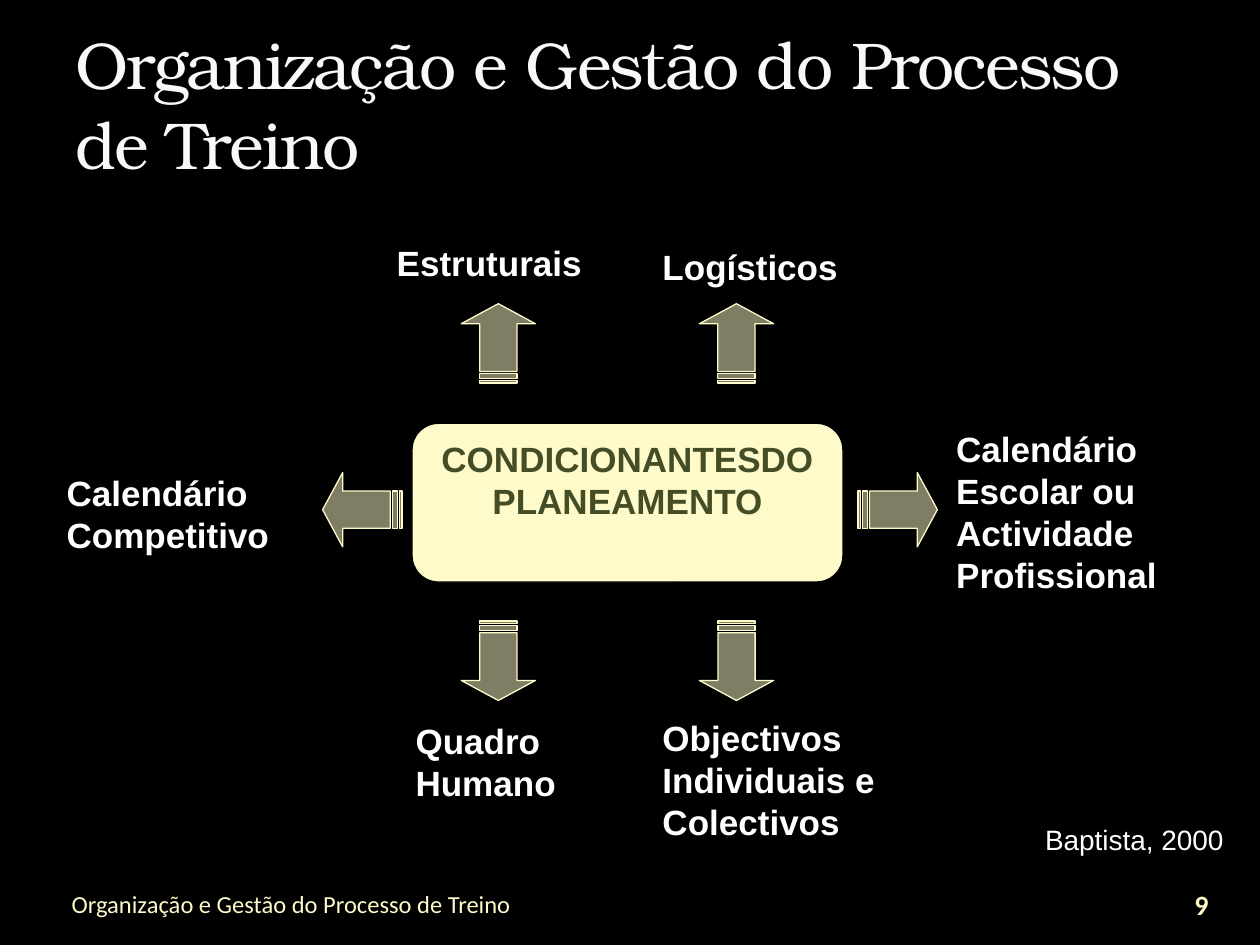
from dataclasses import dataclass

from lxml import etree
from pptx import Presentation
from pptx import util as u
from pptx.dml.color import RGBColor
from pptx.enum import shapes, text
from pptx.oxml import ns


@dataclass(frozen=True)
class Theme:
    back: str = "000000"
    white: str = "FFFFFF"
    title: str = "F9F9F9"
    outline: str = "3C4422"
    cream: str = "FEFAC9"
    olive: str = "444D26"
    title_font: str = "TeX Gyre Bonum"
    label_font: str = "Arial"
    footer_font: str = "Calibri"
    title_size: float = 37.8
    label_size: int = 20
    note_size: int = 16
    footer_size: int = 14


THEME = Theme()
TITLE = "Organização e Gestão do Processo de Treino"
ALIGN = text.PP_ALIGN
ANCHOR = text.MSO_ANCHOR
LABEL = dict(name=THEME.label_font, size=THEME.label_size, bold=True, color=THEME.white)

LABELS = [  # lines, box
    (["Estruturais"], (3.05, 1.87, 1.68, 0.44)),
    (["Logísticos"], (5.16, 1.9, 1.6, 0.44)),
    (["Calendário", "Competitivo"], (0.43, 3.69, 1.82, 0.77)),
    (["Calendário", "Escolar ou", "Actividade", "Profissional"], (7.49, 3.34, 1.81, 1.45)),
    (["Quadro", "Humano"], (3.2, 5.66, 1.33, 0.77)),
    (["Objectivos", "Individuais e", "Colectivos"], (5.16, 5.64, 1.9, 1.11)),
]
ARROW_SIZE = (0.63, 0.59)
COLUMNS, ROWS = (3.64, 5.53), ((2.43, 270), (4.95, 90))
ARROWS = [(left, top, turn) for top, turn in ROWS for left in COLUMNS]
ARROWS += [(2.56, 3.75, 180), (6.81, 3.75, 0)]


def inches(box):
    return [u.Inches(value) for value in box]


def add_alpha(color_fill, percent):
    """Make a solid fill element partly transparent."""
    color = color_fill.find(ns.qn("a:srgbClr"))
    etree.SubElement(color, ns.qn("a:alpha"), val=str(percent * 1000))


def write(frame, lines, style, align=ALIGN.LEFT, **frame_format):
    """Fill a text frame with one paragraph per line."""
    for name, value in frame_format.items():
        setattr(frame, name, value)
    for index, line in enumerate(lines):
        para = frame.paragraphs[0] if index == 0 else frame.add_paragraph()
        para.alignment = align
        span = para.add_run()
        span.text = line
        values = dict(style, size=u.Pt(style["size"]))
        span.font.color.rgb = RGBColor.from_string(values.pop("color"))
        for name, value in values.items():
            setattr(span.font, name, value)


def add_text(page, box, lines, style, **options):
    frame = page.shapes.add_textbox(*inches(box)).text_frame
    write(frame, lines, style, **options)


def paint(shape, fill, line):
    shape.shadow.inherit = False
    shape.fill.solid()
    shape.fill.fore_color.rgb = RGBColor.from_string(fill)
    shape.line.color.rgb = RGBColor.from_string(line)
    shape.line.width = u.Pt(0.75)


def add_title(page, box):
    title = page.shapes.title
    for name, value in zip(("left", "top", "width", "height"), inches(box)):
        setattr(title, name, value)
    style = dict(name=THEME.title_font, size=THEME.title_size, color=THEME.title)
    write(title.text_frame, [TITLE], style, word_wrap=True,
          vertical_anchor=ANCHOR.BOTTOM, auto_size=text.MSO_AUTO_SIZE.NONE)
    # Tight letter spacing and a faint outline
    props = title.text_frame.paragraphs[0].runs[0].font._element
    props.set("spc", "-100")
    outline = etree.Element(ns.qn("a:ln"), w=str(u.Pt(0.25)))
    fill = etree.SubElement(outline, ns.qn("a:solidFill"))
    etree.SubElement(fill, ns.qn("a:srgbClr"), val=THEME.outline)
    add_alpha(fill, 25)
    props.insert(0, outline)


def add_center(page, box):
    center = page.shapes.add_shape(shapes.MSO_SHAPE.ROUNDED_RECTANGLE, *inches(box))
    paint(center, THEME.cream, THEME.back)
    write(center.text_frame, ["CONDICIONANTESDO", "PLANEAMENTO"],
          dict(LABEL, color=THEME.olive), align=ALIGN.CENTER,
          word_wrap=True, vertical_anchor=ANCHOR.TOP)


def add_arrow(page, box, turn):
    arrow = page.shapes.add_shape(shapes.MSO_SHAPE.STRIPED_RIGHT_ARROW, *inches(box))
    arrow.adjustments[0] = 0.5
    arrow.adjustments[1] = 0.27
    arrow.rotation = turn
    paint(arrow, THEME.cream, THEME.cream)
    add_alpha(arrow._element.spPr.find(ns.qn("a:solidFill")), 50)


def add_diagram(page):
    add_center(page, (3.27, 3.36, 3.42, 1.26))
    for lines, box in LABELS:
        add_text(page, box, lines, LABEL, word_wrap=False,
                 auto_size=text.MSO_AUTO_SIZE.SHAPE_TO_FIT_TEXT)
    for left, top, turn in ARROWS:
        add_arrow(page, (left, top, *ARROW_SIZE), turn)


def add_footer(page):
    # Source of the diagram
    note = dict(name=THEME.label_font, size=THEME.note_size, color=THEME.white)
    add_text(page, (7.68, 6.48, 2.13, 0.37), ["Baptista, 2000"], note,
             align=ALIGN.RIGHT, word_wrap=True)
    # Page number and running title
    footer = dict(name=THEME.footer_font, size=THEME.footer_size, color=THEME.cream)
    add_text(page, (9.2, 6.93, 0.67, 0.5), ["9"],
             dict(footer, size=THEME.note_size, bold=True), align=ALIGN.CENTER,
             word_wrap=True, vertical_anchor=ANCHOR.MIDDLE,
             margin_left=0, margin_right=0, margin_top=0, margin_bottom=0)
    add_text(page, (0.47, 6.92, 5.78, 0.42), [TITLE], footer,
             word_wrap=True, vertical_anchor=ANCHOR.BOTTOM)


def main():
    deck = Presentation()
    deck.slide_width, deck.slide_height = inches((10, 7.5))
    page = deck.slides.add_slide(deck.slide_layouts.get_by_name("Title Only"))
    page.background.fill.solid()
    page.background.fill.fore_color.rgb = RGBColor.from_string(THEME.back)
    add_diagram(page)
    add_title(page, (0.5, 0.17, 9, 1.33))
    add_footer(page)
    deck.save("out.pptx")


if __name__ == "__main__":
    main()
